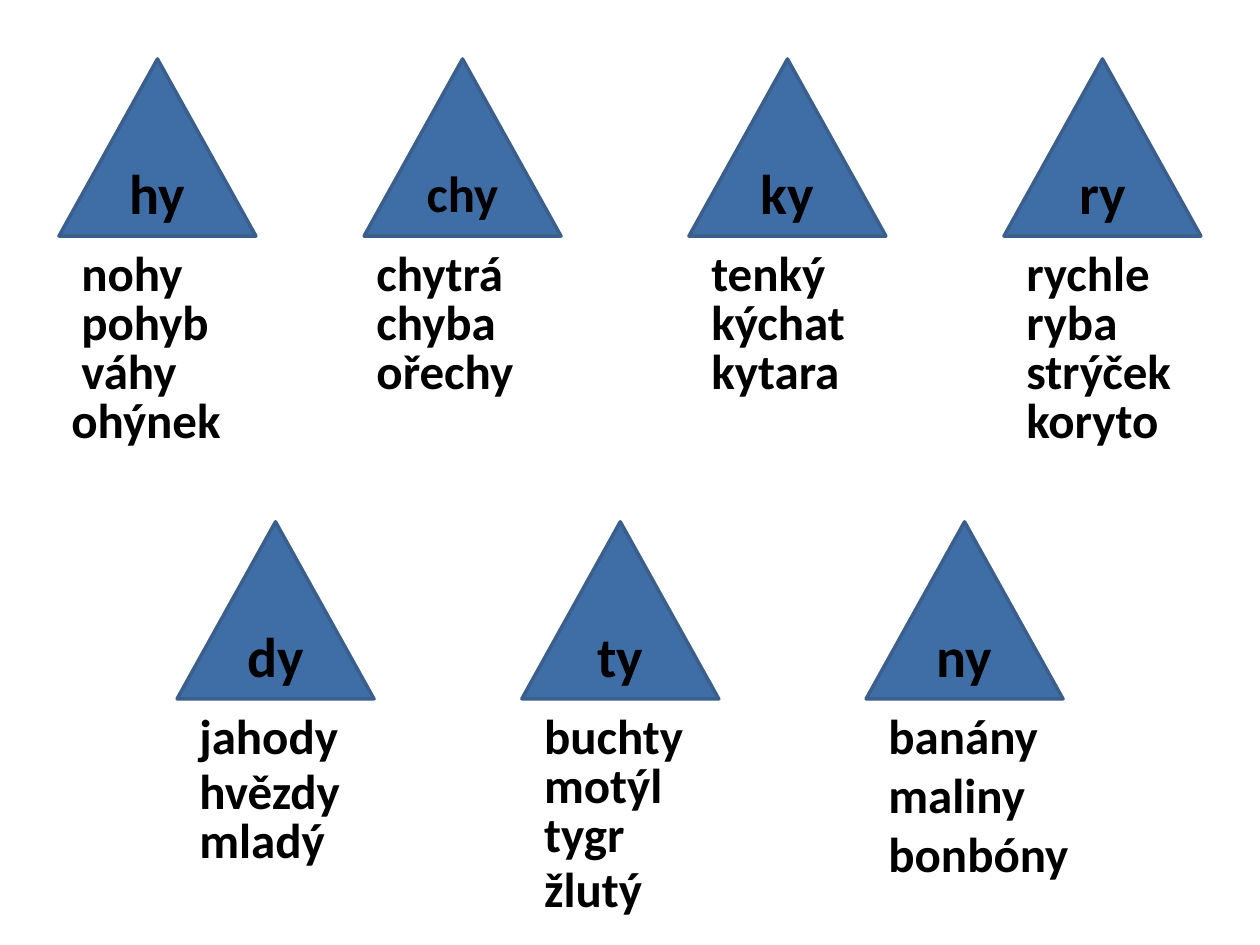
from dataclasses import dataclass

import pptx
import pptx.dml.color
import pptx.enum.shapes
import pptx.enum.text
import pptx.util
from pptx.util import Cm

COLOURS = {"triangle": "3F6EA7", "outline": "3A5F8C", "text": "000000"}
TRIANGLE_WIDTH, TRIANGLE_HEIGHT = 3.97, 3.57
WORD_HEIGHT = 1.45
WORD_PITCH = 0.99
UPPER_TOP, LOWER_TOP = 1.19, 10.52


@dataclass
class Word:
    text: str
    width: float
    extra_gap: float = 0
    shift: float = 0


@dataclass
class SyllableGroup:
    syllable: str
    left: float
    top: float
    words: list[Word]
    size: int = 32
    indent: float = 0.2


GROUPS = [
    SyllableGroup("hy", 1.19, UPPER_TOP, [
        Word("nohy", 3.37), Word("pohyb", 3.57), Word("váhy", 3.57),
        Word("ohýnek", 3.77, shift=-0.2)]),
    SyllableGroup("chy", 7.34, UPPER_TOP, [
        Word("chytrá", 4.17), Word("chyba", 4.17), Word("ořechy", 3.77)],
        size=29, indent=0),
    SyllableGroup("ky", 13.89, UPPER_TOP, [
        Word("tenký", 3.37), Word("kýchat", 3.57), Word("kytara", 3.77)]),
    SyllableGroup("ry", 20.24, UPPER_TOP, [
        Word("rychle", 3.57), Word("ryba", 3.18), Word("strýček", 3.57),
        Word("koryto", 3.57)]),
    SyllableGroup("dy", 3.57, LOWER_TOP, [
        Word("jahody", 4.17), Word("hvězdy", 4.56, 0.13), Word("mladý", 4.76)]),
    SyllableGroup("ty", 10.52, LOWER_TOP, [
        Word("buchty", 3.57), Word("motýl", 3.77), Word("tygr", 4.37),
        Word("žlutý", 3.97, 0.13)]),
    SyllableGroup("ny", 17.46, LOWER_TOP, [
        Word("banány", 3.97), Word("maliny", 4.17, 0.2),
        Word("bonbóny", 4.37, 0.2)]),
]


def colour(name: str) -> pptx.dml.color.RGBColor:
    return pptx.dml.color.RGBColor.from_string(COLOURS[name])


def write(frame, text: str, size: int, alignment) -> None:
    paragraph = frame.paragraphs[0]
    paragraph.alignment = alignment
    run = paragraph.add_run()
    run.text = text
    formats = {"name": "Calibri", "size": pptx.util.Pt(size), "bold": True}
    for attribute, value in formats.items():
        setattr(run.font, attribute, value)
    run.font.color.rgb = colour("text")


def draw_triangle(slide, group: SyllableGroup) -> None:
    triangle = slide.shapes.add_shape(
        pptx.enum.shapes.MSO_SHAPE.ISOSCELES_TRIANGLE,
        Cm(group.left), Cm(group.top), Cm(TRIANGLE_WIDTH), Cm(TRIANGLE_HEIGHT))
    triangle.shadow.inherit = False
    triangle.fill.solid()
    triangle.fill.fore_color.rgb = colour("triangle")
    triangle.line.color.rgb = colour("outline")
    triangle.line.width = pptx.util.Pt(2)
    triangle.text_frame.word_wrap = False
    triangle.text_frame.vertical_anchor = pptx.enum.text.MSO_ANCHOR.MIDDLE
    write(triangle.text_frame, group.syllable, group.size,
          pptx.enum.text.PP_ALIGN.CENTER)


def draw_words(slide, group: SyllableGroup) -> None:
    top = group.top + TRIANGLE_HEIGHT
    for word in group.words:
        top += word.extra_gap
        label = slide.shapes.add_textbox(
            Cm(group.left + group.indent + word.shift), Cm(top),
            Cm(word.width), Cm(WORD_HEIGHT))
        label.text_frame.word_wrap = True
        label.text_frame.auto_size = pptx.enum.text.MSO_AUTO_SIZE.SHAPE_TO_FIT_TEXT
        write(label.text_frame, word.text, 28, pptx.enum.text.PP_ALIGN.LEFT)
        top += WORD_PITCH


def main() -> None:
    presentation = pptx.Presentation()
    presentation.slide_width = Cm(25.4)
    presentation.slide_height = Cm(19.05)
    slide = presentation.slides.add_slide(presentation.slide_layouts[6])
    for group in GROUPS:
        draw_triangle(slide, group)
    for group in GROUPS:
        draw_words(slide, group)
    presentation.save("out.pptx")


if __name__ == "__main__":
    main()
